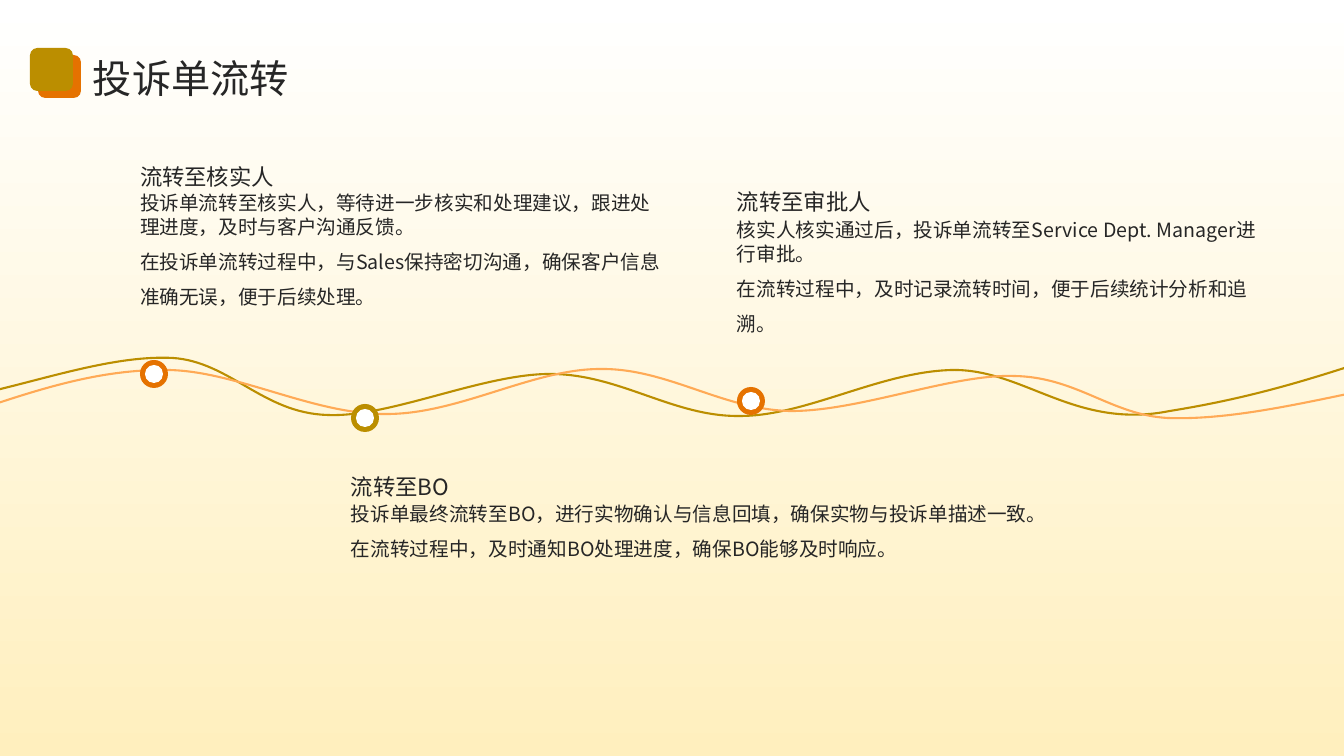
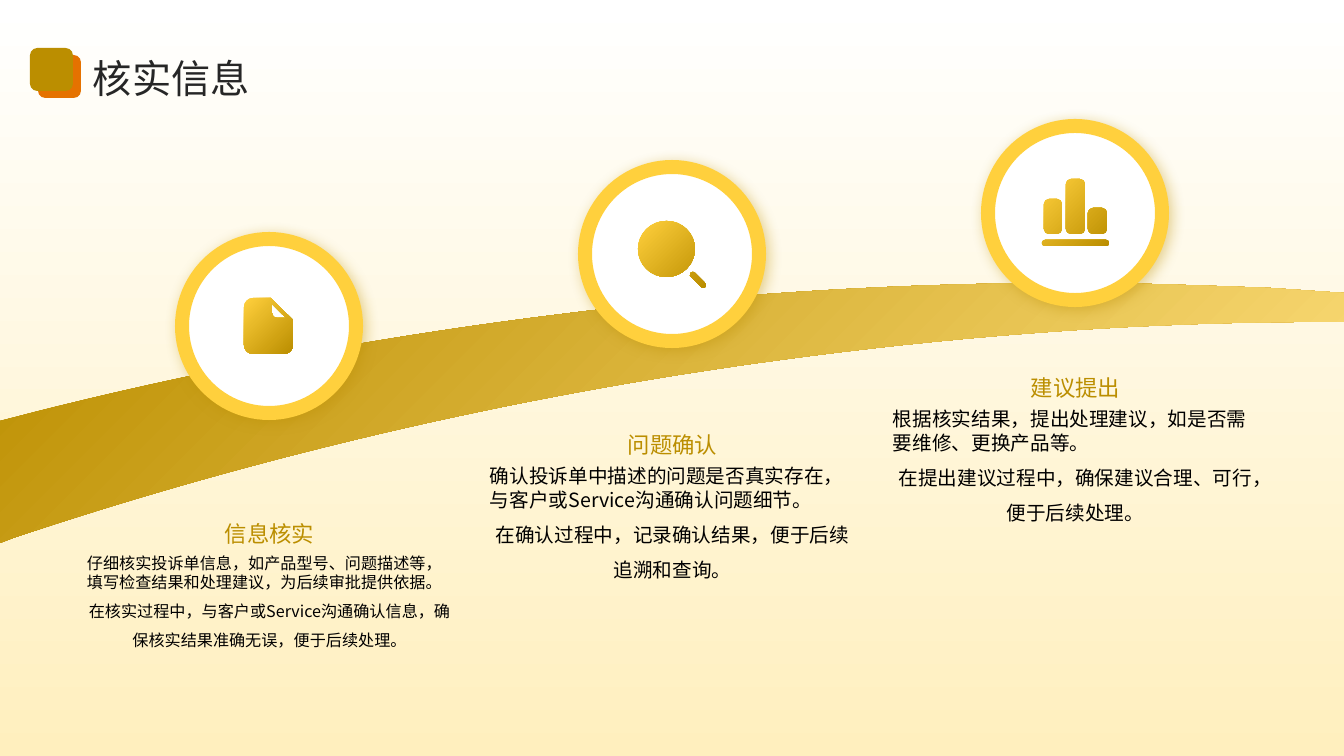
from dataclasses import dataclass

import pptx
import pptx.dml.color
import pptx.enum.shapes
import pptx.enum.text
import pptx.oxml.ns
import pptx.util
from lxml import etree

# Shared look
PX = 914400 / 100.8
SLIDE_WIDTH, SLIDE_HEIGHT = 1344, 756
FONT = "Noto Sans CJK SC"
OLIVE, ORANGE, PEACH, YELLOW = "BB8E00", "E57200", "FFAA56", "FFD03D"
INK, BLACK, WHITE = "262626", "000000", "FFFFFF"

Align = pptx.enum.text.PP_ALIGN
Anchor = pptx.enum.text.MSO_ANCHOR
Preset = pptx.enum.shapes.MSO_SHAPE
qn = pptx.oxml.ns.qn
# A contour starts with a point; then pairs are lines and sextuples are curves.
Contour = list[tuple[float, ...]]


@dataclass(frozen=True)
class Step:
    """A stop on the wave, with its marker and text."""
    left: int
    marker_top: int
    heading_top: int
    body_top: int
    width: int
    color: str
    heading: str
    body: str


@dataclass(frozen=True)
class Stage:
    """A badge on the rising band, with its icon and text."""
    badge_top: int
    heading_top: int
    body_size: float
    icon: list[Contour]
    heading: str
    body: str


def px(length: float) -> pptx.util.Emu:
    return pptx.util.Emu(round(length * PX))


def rgb(color: str) -> pptx.dml.color.RGBColor:
    return pptx.dml.color.RGBColor.from_string(color)


def fill_gradient(fill, start: str, end: str, clockwise: int) -> None:
    fill.gradient()
    fill.gradient_angle = 360 - clockwise
    for stop, color in zip(fill.gradient_stops, (start, end)):
        stop.color.rgb = rgb(color)


def add_preset(shapes, preset, left: int, top: int, width: int, height: int, color: str):
    shape = shapes.add_shape(preset, px(left), px(top), px(width), px(height))
    shape.shadow.inherit = False
    shape.fill.solid()
    shape.fill.fore_color.rgb = rgb(color)
    shape.line.fill.background()
    return shape


# Text
def write_text(shape, text: str, size: float, color: str, spacing: float, align, anchor) -> None:
    frame = shape.text_frame
    frame.word_wrap = True
    frame.auto_size = pptx.enum.text.MSO_AUTO_SIZE.NONE
    frame.margin_left = frame.margin_right = frame.margin_top = frame.margin_bottom = 0
    frame.vertical_anchor = anchor
    paragraph = frame.paragraphs[0]
    # One run keeps the line feed, so the spacing applies from the second sentence on.
    paragraph.add_run().text = text
    paragraph.alignment = align
    paragraph.line_spacing = spacing
    font = paragraph.font
    font.size = pptx.util.Pt(size)
    font.bold = False
    font.color.rgb = rgb(color)
    font.name = FONT
    etree.SubElement(font._element, qn("a:ea"), typeface=FONT)


def add_text(slide, left: int, top: int, width: int, height: int, text: str, size: float,
             color: str, spacing: float, align, anchor) -> None:
    box = slide.shapes.add_textbox(px(left), px(top), px(width), px(height))
    write_text(box, text, size, color, spacing, align, anchor)


# Curved outlines
def add_outline(slide, contours: list[Contour], close: bool = True):
    """Build the outline through its anchors, then bend the curved segments."""
    builder = slide.shapes.build_freeform(*map(px, contours[0][0]), scale=1.0)
    for index, (start, *segments) in enumerate(contours):
        if index:
            builder.move_to(*map(px, start))
        anchors = [(px(segment[-2]), px(segment[-1])) for segment in segments]
        builder.add_line_segments(anchors, close=close)
    shape = builder.convert_to_shape()
    shape.shadow.inherit = False
    shape.line.fill.background()
    nodes = list(shape._element.iter(qn("a:lnTo")))
    segments = [segment for contour in contours for segment in contour[1:]]
    for node, segment in zip(nodes, segments):
        if len(segment) == 6:
            node.tag = qn("a:cubicBezTo")
            for slot in (0, 1):
                x, y = segment[2 * slot:2 * slot + 2]
                control = etree.SubElement(node, qn("a:pt"), x=str(px(x) - shape.left),
                                           y=str(px(y) - shape.top))
                node.insert(slot, control)
    return shape


def rounded(x: int, y: int, w: int, h: int, r: int) -> Contour:
    k = 0.45 * r
    right, bottom = x + w, y + h
    return [(x + r, y), (right - r, y), (right - k, y, right, y + k, right, y + r),
            (right, bottom - r), (right, bottom - k, right - k, bottom, right - r, bottom),
            (x + r, bottom), (x + k, bottom, x, bottom - k, x, bottom - r),
            (x, y + r), (x, y + k, x + k, y, x + r, y)]


# Slide content
OLIVE_WAVE: Contour = [
    (-16, 393), (49, 378, 116, 355, 173, 358), (230, 362, 263, 413, 327, 415),
    (389, 418, 482, 374, 550, 374), (620, 374, 673, 417, 740, 416),
    (807, 416, 881, 371, 954, 370), (1025, 370, 1076, 430, 1170, 411),
    (1245, 399, 1302, 382, 1363, 362)]
PEACH_WAVE: Contour = [
    (1357, 392), (1290, 406, 1225, 420, 1168, 418), (1111, 415, 1077, 377, 1014, 376),
    (951, 374, 858, 412, 789, 411), (721, 409, 667, 368, 600, 369),
    (533, 369, 459, 414, 387, 414), (314, 415, 237, 371, 168, 370),
    (101, 369, 40, 389, -20, 409)]
BAND: Contour = [
    (1045, 283), (1065, 283, 1085, 283, 1105, 283), (1160, 284, 1216, 286, 1269, 288),
    (1344, 293), (1344, 322), (1338, 322), (1127, 321, 903, 339, 672, 376),
    (437, 414, 216, 470, 13, 538), (0, 543), (0, 421), (35, 412),
    (217, 366, 410, 331, 613, 308), (761, 292, 905, 284, 1045, 283)]

DOCUMENT: list[Contour] = [
    [(272, 304), (272, 313), (272, 316, 274, 318, 277, 318), (286, 318)],
    [(253, 298), (271, 298), (293, 320), (293, 345), (293, 350, 289, 354, 284, 354),
     (253, 354), (248, 354, 244, 350, 244, 345), (244, 307),
     (244, 302, 248, 298, 253, 298)]]
MAGNIFIER: list[Contour] = [
    [(693, 272), (694, 272, 694, 272, 695, 273), (705, 283), (707, 285, 706, 288, 703, 288),
     (702, 288, 702, 288, 701, 287), (691, 277), (689, 275, 690, 272, 693, 272)],
    rounded(638, 221, 57, 56, 28)]
BAR_CHART: list[Contour] = [
    rounded(1042, 240, 67, 6, 3), rounded(1088, 208, 19, 26, 5),
    rounded(1044, 199, 18, 35, 5), rounded(1066, 179, 19, 55, 5)]

STEPS = [
    Step(140, 360, 152, 191, 523, ORANGE, "流转至核实人",
         "投诉单流转至核实人，等待进一步核实和处理建议，跟进处理进度，及时与客户沟通反馈。\n"
         "在投诉单流转过程中，与Sales保持密切沟通，确保客户信息准确无误，便于后续处理。"),
    Step(737, 387, 177, 218, 523, ORANGE, "流转至审批人",
         "核实人核实通过后，投诉单流转至Service Dept. Manager进行审批。\n"
         "在流转过程中，及时记录流转时间，便于后续统计分析和追溯。"),
    Step(351, 404, 462, 502, 706, OLIVE, "流转至BO",
         "投诉单最终流转至BO，进行实物确认与信息回填，确保实物与投诉单描述一致。\n"
         "在流转过程中，及时通知BO处理进度，确保BO能够及时响应。"),
]
STAGES = [
    Stage(239, 478, 11.5, DOCUMENT, "信息核实",
          "仔细核实投诉单信息，如产品型号、问题描述等，填写检查结果和处理建议，为后续审批提供依据。\n"
          "在核实过程中，与客户或Service沟通确认信息，确保核实结果准确无误，便于后续处理。"),
    Stage(167, 389, 14, MAGNIFIER, "问题确认",
          "确认投诉单中描述的问题是否真实存在，与客户或Service沟通确认问题细节。\n"
          "在确认过程中，记录确认结果，便于后续追溯和查询。"),
    Stage(126, 332, 14, BAR_CHART, "建议提出",
          "根据核实结果，提出处理建议，如是否需要维修、更换产品等。\n"
          "在提出建议过程中，确保建议合理、可行，便于后续处理。"),
]
STAGE_PITCH = 403


# Parts both slides share
def add_backed_slide(deck):
    slide = deck.slides.add_slide(deck.slide_layouts[5])
    backdrop = add_preset(slide.shapes, Preset.FLOWCHART_PROCESS, 0, 0,
                          SLIDE_WIDTH, SLIDE_HEIGHT, WHITE)
    fill_gradient(backdrop.fill, WHITE, "FFEFBE", 90)
    return slide


def add_title(slide, text: str) -> None:
    title = slide.shapes.title
    slide.shapes._spTree.append(title._element)  # in front of the backdrop
    title.left, title.top, title.width, title.height = px(93), px(50), px(1176), px(51)
    write_text(title, text, 28, INK, 1.1, Align.LEFT, Anchor.MIDDLE)
    emblem = slide.shapes.add_group_shape()
    for left, top, color in ((38, 55, ORANGE), (30, 48, OLIVE)):
        tile = add_preset(emblem.shapes, Preset.ROUNDED_RECTANGLE, left, top, 43, 43, color)
        tile.adjustments[0] = 0.17


def add_badge_shadow(badge) -> None:
    effects = badge._element.spPr.find(qn("a:effectLst"))
    shadow = etree.SubElement(effects, qn("a:outerShdw"), blurRad="127000", dist="38100",
                              dir="2700000", algn="tl", rotWithShape="0")
    tint = etree.SubElement(shadow, qn("a:srgbClr"), val=OLIVE)
    etree.SubElement(tint, qn("a:alpha"), val="40000")


def build_flow_slide(deck) -> None:
    slide = add_backed_slide(deck)
    for contour, color in ((OLIVE_WAVE, OLIVE), (PEACH_WAVE, PEACH)):
        wave = add_outline(slide, [contour], close=False)
        wave.fill.background()
        wave.line.color.rgb = rgb(color)
        wave.line.width = pptx.util.Pt(1.5)
    for step in STEPS:
        for inset, color in ((0, step.color), (5, WHITE)):
            size = 28 - 2 * inset
            add_preset(slide.shapes, Preset.OVAL, step.left + inset, step.marker_top + inset,
                       size, size, color)
        add_text(slide, step.left, step.body_top, step.width, 147, step.body,
                 14, INK, 1.5, Align.LEFT, Anchor.TOP)
        add_text(slide, step.left, step.heading_top, step.width, 36, step.heading,
                 16, INK, 1.5, Align.LEFT, Anchor.MIDDLE)
    add_title(slide, "投诉单流转")


def build_stage_slide(deck) -> None:
    slide = add_backed_slide(deck)
    band = add_outline(slide, [BAND])
    fill_gradient(band.fill, OLIVE, "FFE07E", 45)
    for index, stage in enumerate(STAGES):
        shift = index * STAGE_PITCH
        badge = add_preset(slide.shapes, Preset.OVAL, 182 + shift, stage.badge_top,
                           174, 174, WHITE)
        badge.line.color.rgb = rgb(YELLOW)
        badge.line.width = pptx.util.Pt(10)
        add_badge_shadow(badge)
        add_text(slide, 87 + shift, stage.heading_top + 75, 365, 143, stage.body,
                 stage.body_size, BLACK, 1.5, Align.CENTER, Anchor.TOP)
        add_text(slide, 87 + shift, stage.heading_top, 365, 69, stage.heading,
                 16, OLIVE, 1.3, Align.CENTER, Anchor.BOTTOM)
        icon = add_outline(slide, stage.icon)
        fill_gradient(icon.fill, YELLOW, OLIVE, 45)
    add_title(slide, "核实信息")


def main() -> None:
    deck = pptx.Presentation()
    deck.slide_width, deck.slide_height = px(SLIDE_WIDTH), px(SLIDE_HEIGHT)
    build_flow_slide(deck)
    build_stage_slide(deck)
    deck.save("out.pptx")


if __name__ == "__main__":
    main()
